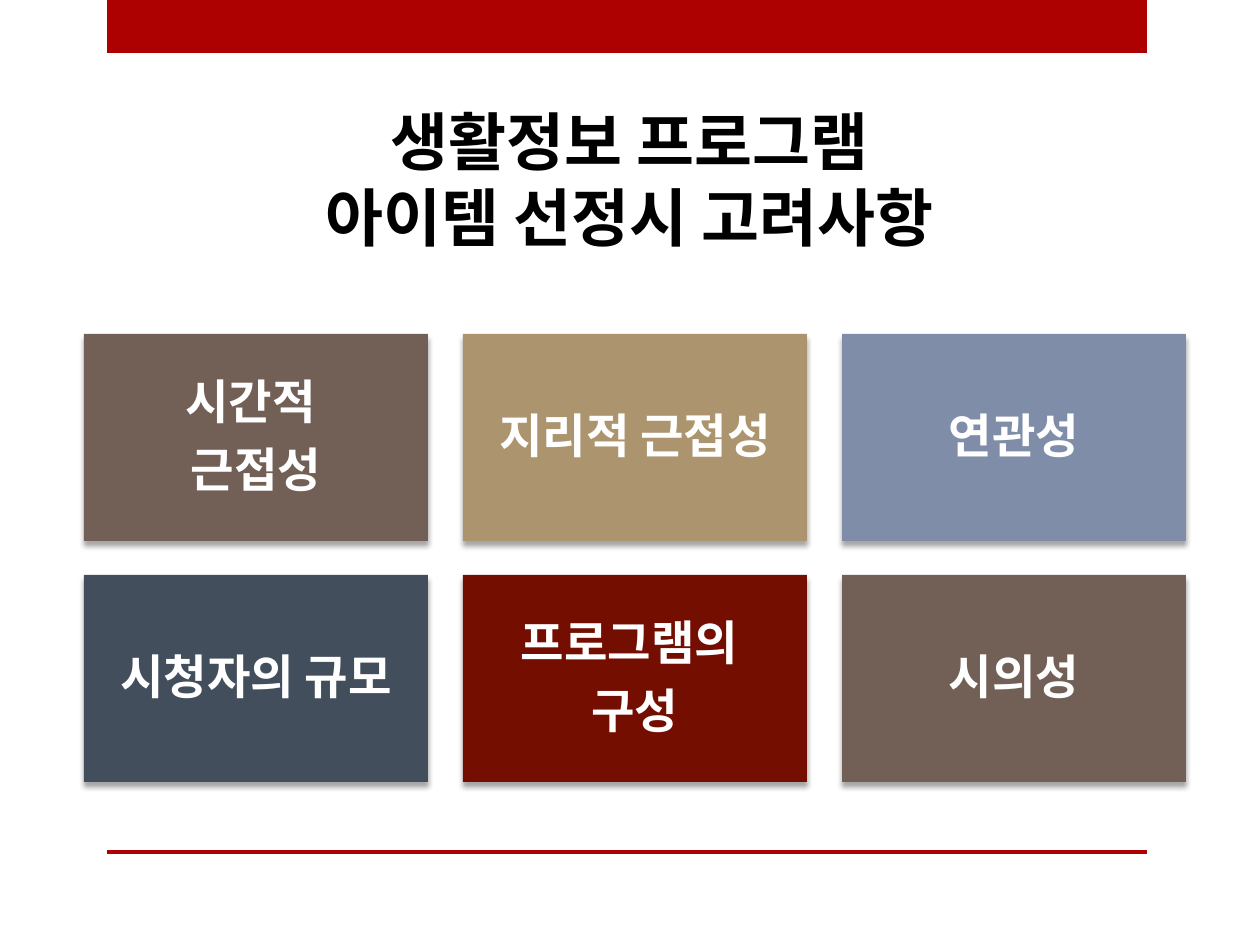
from lxml import etree
from pptx import Presentation
from pptx import util as u
from pptx.dml import color
from pptx.enum import shapes, text
from pptx.oxml import ns

FONT = "Noto Sans CJK KR"
RED = "AD0101"
CARDS = [
    ("시간적 \n근접성", "726056"),
    ("지리적 근접성", "AC956E"),
    ("연관성", "808DA9"),
    ("시청자의 규모", "424E5B"),
    ("프로그램의 \n구성", "730E00"),
    ("시의성", "726056"),
]


def px(n):
    return u.Emu(round(n * 914400 / 126))


def rgb(code):
    return color.RGBColor.from_string(code)


def sub(parent, tag, **attrs):
    return etree.SubElement(parent, ns.qn(tag), attrs)


def write(shape, words, size, ink, line, after=0, inset=None,
          anchor=text.MSO_ANCHOR.MIDDLE, wrap=True):
    frame = shape.text_frame
    frame.text = words
    frame.word_wrap = wrap
    frame.vertical_anchor = anchor
    if inset is not None:
        frame.margin_left = frame.margin_right = px(inset)
        frame.margin_top = frame.margin_bottom = px(inset)
    for para in frame.paragraphs:
        para.alignment = text.PP_ALIGN.CENTER
        para.line_spacing = u.Pt(line)
        para.space_before = u.Pt(0)
        para.space_after = u.Pt(after)
        for run in para.runs:
            font = run.font
            font.name, font.size, font.bold = FONT, u.Pt(size), True
            font.color.rgb = rgb(ink)
            sub(font._element, "a:ea", typeface=FONT)


def rect(slide, x, y, w, h, fill):
    shape = slide.shapes.add_shape(
        shapes.MSO_SHAPE.RECTANGLE, px(x), px(y), px(w), px(h))
    shape.shadow.inherit = False
    shape.fill.solid()
    shape.fill.fore_color.rgb = rgb(fill)
    shape.line.fill.background()
    return shape


def shade(shape):
    effects = shape._element.spPr.find(ns.qn("a:effectLst"))
    outer = sub(effects, "a:outerShdw", blurRad=str(u.Pt(3)),
                dist=str(u.Pt(3)), dir="5400000", rotWithShape="0")
    tint = sub(outer, "a:srgbClr", val="000000")
    sub(tint, "a:alpha", val="35000")


def card(slide, place, words, fill):
    row, col = divmod(place, 3)
    shape = rect(slide, 84 + 379 * col, 334 + 241 * row, 344, 207, fill)
    shade(shape)
    write(shape, words, 27, "FFFFFF", line=29.2, after=9.45, inset=14)


def head(slide, words):
    title = slide.shapes.title
    title.left, title.top = px(267), px(96)
    title.width, title.height = px(725), px(165)
    write(title, words, 36, "000000", line=43.5,
          anchor=text.MSO_ANCHOR.TOP, wrap=False)
    title.text_frame.auto_size = text.MSO_AUTO_SIZE.SHAPE_TO_FIT_TEXT


def main():
    deck = Presentation()
    deck.slide_width, deck.slide_height = px(1260), px(945)
    slide = deck.slides.add_slide(deck.slide_layouts[5])
    rect(slide, 107, 0, 1040, 53, RED)
    rect(slide, 107, 850, 1040, 4, RED)
    for place, (words, fill) in enumerate(CARDS):
        card(slide, place, words, fill)
    head(slide, "생활정보 프로그램\n아이템 선정시 고려사항")
    deck.save("out.pptx")


if __name__ == "__main__":
    main()
